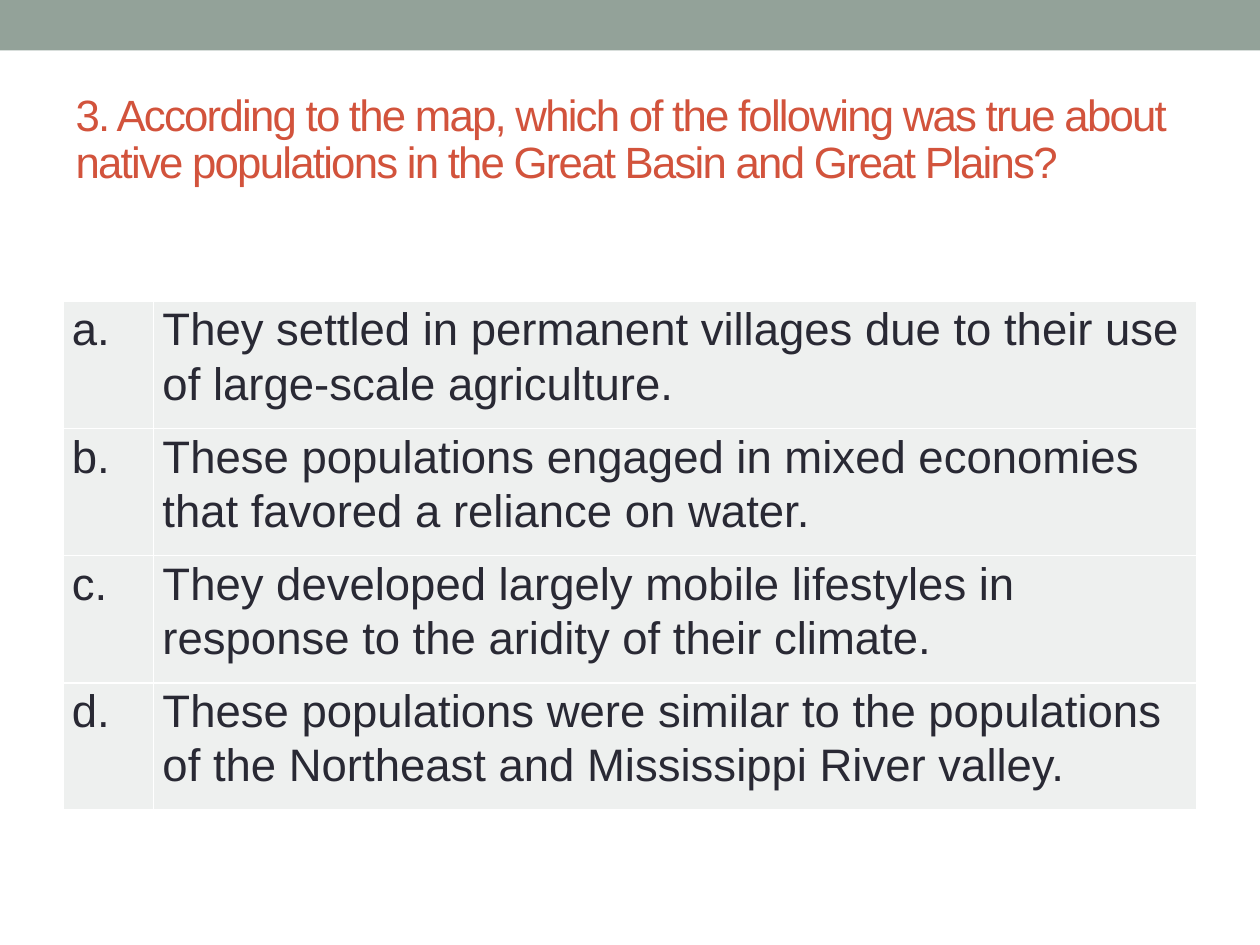
from lxml import etree
from pptx import Presentation
from pptx.dml.color import RGBColor as RGB
from pptx.enum.shapes import MSO_SHAPE as Shape
from pptx.enum.text import MSO_ANCHOR as Anchor, MSO_AUTO_SIZE as Fit, PP_ALIGN as Align
from pptx.oxml import parse_xml
from pptx.oxml.ns import nsdecls
from pptx.util import Inches, Pt

SAGE = RGB(0x93, 0xA2, 0x99)
PALE = RGB(0xEE, 0xF0, 0xEF)
RUST = RGB(0xD2, 0x53, 0x3C)
INK = RGB(0x29, 0x29, 0x34)
WHITE = RGB(0xFF, 0xFF, 0xFF)

QUESTION = ("3. According to the map, which of the following was true about "
            "native populations in the Great Basin and Great Plains?")
ANSWERS = [
    ("a.", "They settled in permanent villages due to their use of large-scale agriculture."),
    ("b.", "These populations engaged in mixed economies that favored a reliance on water."),
    ("c.", "They developed largely mobile lifestyles in response to the aridity of their climate."),
    ("d.", "These populations were similar to the populations of the Northeast "
           "and Mississippi River valley."),
]


class Quiz:
    font = "Arial"

    def __init__(self, deck):
        self.slide = deck.slides.add_slide(deck.slide_layouts[5])
        self.slide.background.fill.solid()
        self.slide.background.fill.fore_color.rgb = WHITE

    def label(self, frame, text, size, color, spacing):
        """Set the frame's text in the slide's style and return its run."""
        frame.text = text
        para = frame.paragraphs[0]
        para.alignment = Align.LEFT
        para.line_spacing = spacing
        run = para.runs[0]
        run.font.name = self.font
        run.font.size = Pt(size)
        run.font.color.rgb = color
        return run

    def band(self, left, top, width, height, color):
        bar = self.slide.shapes.add_shape(
            Shape.RECTANGLE, Inches(left), Inches(top), Inches(width), Inches(height))
        bar.shadow.inherit = False
        bar.fill.solid()
        bar.fill.fore_color.rgb = color
        bar.line.fill.background()

    def title(self, text, left, top, width, height):
        box = self.slide.shapes.title
        box.left, box.top = Inches(left), Inches(top)
        box.width, box.height = Inches(width), Inches(height)
        frame = box.text_frame
        frame.word_wrap = True
        frame.auto_size = Fit.NONE
        frame.vertical_anchor = Anchor.MIDDLE
        run = self.label(frame, text, 25, RUST, 0.9)
        frame.paragraphs[0].space_after = Pt(6)
        run._r.get_or_add_rPr().set("spc", "-100")

    def edge(self, cell, color):
        """Draw a 1 pt line on all four sides of the cell."""
        props = cell._tc.get_or_add_tcPr()
        for spot, side in enumerate(("lnL", "lnR", "lnT", "lnB")):
            line = parse_xml(
                f'<a:{side} {nsdecls("a")} w="{Pt(1)}"><a:solidFill>'
                f'<a:srgbClr val="{color}"/></a:solidFill></a:{side}>')
            props.insert(spot, line)

    def table(self, rows, left, top, widths, height):
        grid = self.slide.shapes.add_table(
            len(rows), len(widths), Inches(left), Inches(top),
            Inches(sum(widths)), Inches(height * len(rows))).table
        grid.first_row = grid.horz_banding = False
        for col, width in zip(grid.columns, widths):
            col.width = Inches(width)
        for row, texts in zip(grid.rows, rows):
            row.height = Inches(height)
            for cell, text in zip(row.cells, texts):
                cell.margin_left = cell.margin_right = Inches(0.07)
                cell.margin_top = cell.margin_bottom = 0
                cell.fill.solid()
                cell.fill.fore_color.rgb = PALE
                self.edge(cell, WHITE)
                self.label(cell.text_frame, text, 26, INK, 1.07)


def main():
    deck = Presentation()
    deck.slide_width, deck.slide_height = Inches(10), Inches(7.5)
    quiz = Quiz(deck)
    quiz.band(0, 0, 10, 0.4, SAGE)
    quiz.title(QUESTION, 0.5, 0.58, 9, 1.08)
    quiz.table(ANSWERS, 0.5, 2.39, (0.72, 8.28), 1.01)
    deck.save("out.pptx")


if __name__ == "__main__":
    main()
